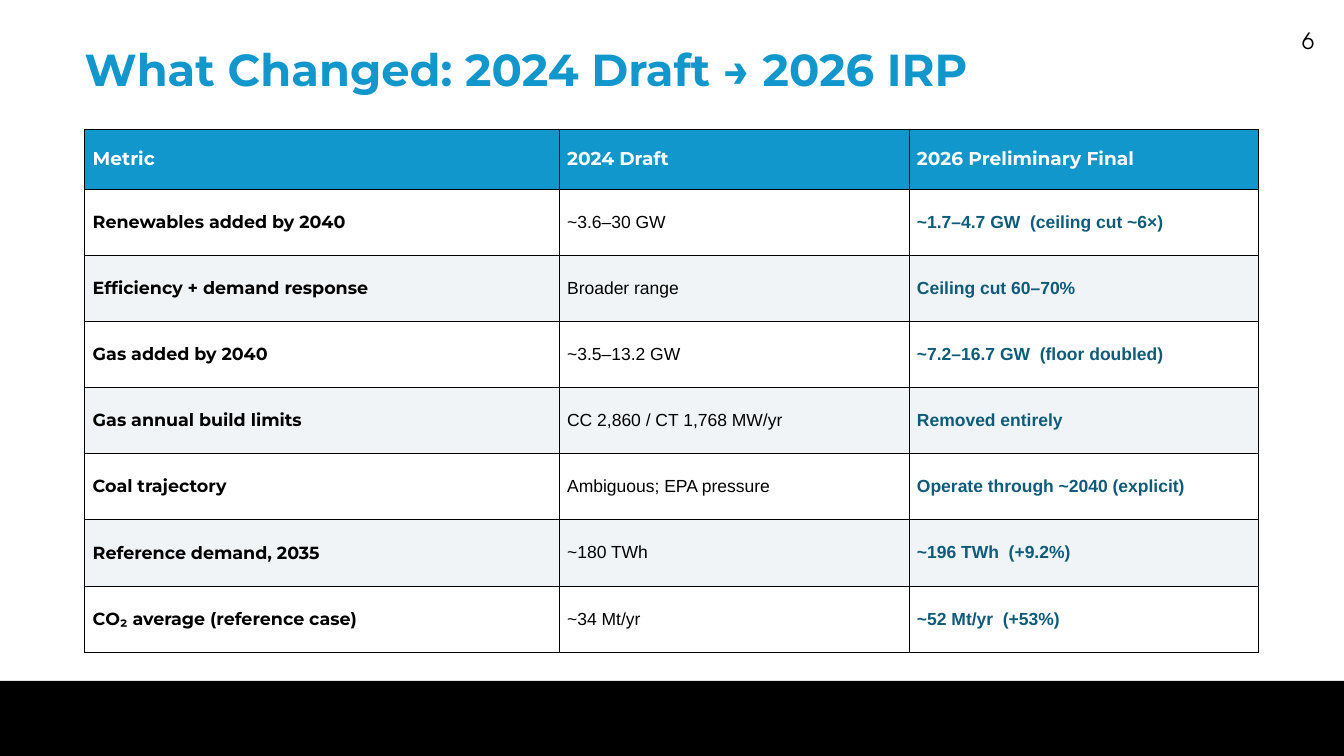
"""Build the slide comparing the 2024 draft with the 2026 resource plan."""
from lxml.etree import SubElement
from pptx import Presentation
from pptx.dml.color import RGBColor
from pptx.enum.shapes import MSO_SHAPE
from pptx.enum.text import MSO_ANCHOR, MSO_AUTO_SIZE, PP_ALIGN
from pptx.oxml.ns import qn
from pptx.util import Inches, Pt

COLORS = {
    "accent": "1297CC",
    "deep": "0E5C7A",
    "stripe": "F0F4F7",
    "black": "000000",
    "white": "FFFFFF",
}
ROWS = [
    ("Metric", "2024 Draft", "2026 Preliminary Final"),
    ("Renewables added by 2040", "~3.6–30 GW", "~1.7–4.7 GW  (ceiling cut ~6×)"),
    ("Efficiency + demand response", "Broader range", "Ceiling cut 60–70%"),
    ("Gas added by 2040", "~3.5–13.2 GW", "~7.2–16.7 GW  (floor doubled)"),
    ("Gas annual build limits", "CC 2,860 / CT 1,768 MW/yr", "Removed entirely"),
    ("Coal trajectory", "Ambiguous; EPA pressure", "Operate through ~2040 (explicit)"),
    ("Reference demand, 2035", "~180 TWh", "~196 TWh  (+9.2%)"),
    ("CO₂ average (reference case)", "~34 Mt/yr", "~52 Mt/yr  (+53%)"),
]
HEADER_STYLE = ("Montserrat", 26.5, "white", True)
COLUMN_STYLES = [
    ("Montserrat", 25, "black", True),
    ("Arial", 25, "black", False),
    ("Arial", 25, "deep", True),
]


def add_run(paragraph, text, font_name, size, color, bold):
    run = paragraph.add_run()
    run.text = text
    run.font.name = font_name
    run.font.size = Pt(size)
    run.font.bold = bold
    run.font.color.rgb = RGBColor.from_string(COLORS[color])


def add_borders(cell):
    properties = cell._tc.get_or_add_tcPr()
    for position, side in enumerate(("lnL", "lnR", "lnT", "lnB")):
        line = properties.makeelement(qn(f"a:{side}"), {"w": str(Pt(1))})
        fill = SubElement(line, qn("a:solidFill"))
        SubElement(fill, qn("a:srgbClr"), val=COLORS["black"])
        properties.insert(position, line)


presentation = Presentation()
presentation.slide_width = Inches(26.66)
presentation.slide_height = Inches(15)
width, height = presentation.slide_width, presentation.slide_height
slide = presentation.slides.add_slide(presentation.slide_layouts[5])
margin = Inches(1.68)
content_width = Inches(23.29)

band_top = Inches(13.51)
band = slide.shapes.add_shape(MSO_SHAPE.RECTANGLE, 0, band_top, width, height - band_top)
band.shadow.inherit = False
band.fill.solid()
band.fill.fore_color.rgb = RGBColor.from_string(COLORS["black"])
band.line.fill.background()

number = slide.shapes.add_textbox(Inches(24.55), Inches(0.43), Inches(1.72), Inches(0.74))
number_frame = number.text_frame
number_frame.word_wrap = True
number_frame.margin_left = number_frame.margin_right = Inches(0.2)
number_frame.margin_top = number_frame.margin_bottom = Inches(0.1)
number_frame.paragraphs[0].alignment = PP_ALIGN.RIGHT
add_run(number_frame.paragraphs[0], "6", "TeX Gyre Adventor", 32, "black", False)

title = slide.shapes.title
title.left, title.top = margin, Inches(0.82)
title.width, title.height = content_width, Inches(1.42)
title_frame = title.text_frame
title_frame.margin_left = title_frame.margin_right = 0
title_frame.margin_top = title_frame.margin_bottom = 0
title_frame.auto_size = MSO_AUTO_SIZE.NONE
title_frame.vertical_anchor = MSO_ANCHOR.TOP
title_frame.paragraphs[0].alignment = PP_ALIGN.LEFT
add_run(title_frame.paragraphs[0], "What Changed: 2024 Draft → 2026 IRP",
        "Montserrat", 64, "accent", True)

table_height = Inches(10.37)
header_height = Inches(1.18)
body_height = (table_height - header_height) // (len(ROWS) - 1)
table = slide.shapes.add_table(len(ROWS), len(COLUMN_STYLES), margin, Inches(2.57),
                               content_width, table_height).table
for column, column_width in zip(table.columns, (9.41, 6.94, 6.94)):
    column.width = Inches(column_width)
for row_index, texts in enumerate(ROWS):
    table.rows[row_index].height = body_height if row_index else header_height
    for column_index, text in enumerate(texts):
        cell = table.cell(row_index, column_index)
        cell.vertical_anchor = MSO_ANCHOR.MIDDLE
        cell.margin_left = cell.margin_right = Inches(0.16)
        cell.margin_top = cell.margin_bottom = Inches(0.09)
        fill_name = ("white" if row_index % 2 else "stripe") if row_index else "accent"
        cell.fill.solid()
        cell.fill.fore_color.rgb = RGBColor.from_string(COLORS[fill_name])
        add_borders(cell)
        style = COLUMN_STYLES[column_index] if row_index else HEADER_STYLE
        add_run(cell.text_frame.paragraphs[0], text, *style)

presentation.save("out.pptx")
